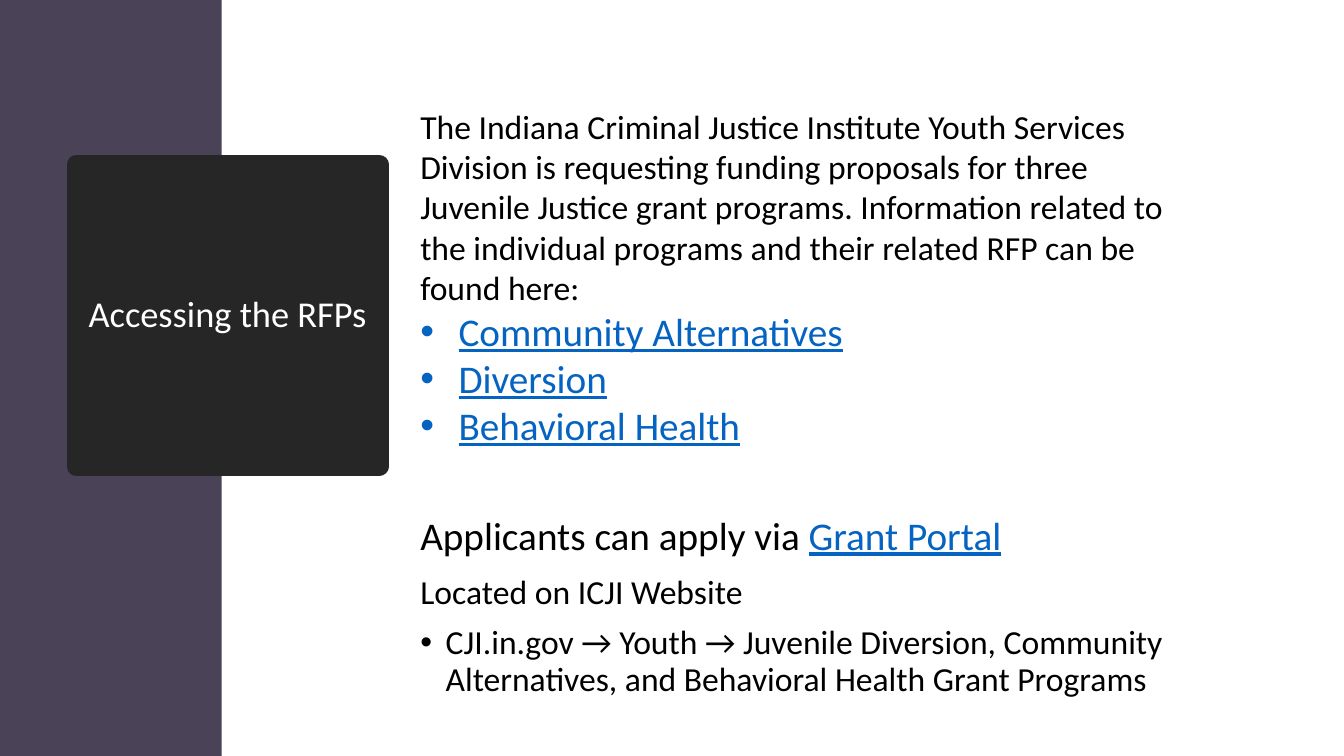
from dataclasses import dataclass

import pptx
import pptx.dml.color
import pptx.enum.shapes
import pptx.enum.text
import pptx.oxml.ns
import pptx.util
from lxml import etree


@dataclass(frozen=True)
class Theme:
    font: str = "Calibri"
    band: str = "4A4358"
    card: str = "262626"
    light: str = "FFFFFF"
    dark: str = "000000"
    link: str = "0563C1"
    title_size: int = 26
    body_size: int = 24
    large_size: int = 28
    card_border: float = 13.75


@dataclass(frozen=True)
class Area:
    """A rectangle in percent of the slide's width and height."""
    left: float
    top: float
    width: float
    height: float


@dataclass(frozen=True)
class Run:
    text: str
    linked: bool = False


@dataclass(frozen=True)
class Line:
    runs: tuple[Run, ...]
    size: int
    indent: float = 0


THEME = Theme()
SLIDE_WIDTH = pptx.util.Inches(13.33)
SLIDE_HEIGHT = pptx.util.Inches(7.5)
TEXT_LEFT, TEXT_WIDTH = 30.53, 58.96

BAND = Area(0, 0, 16.5, 100)
CARD = Area(5.7, 21.73, 22.5, 40)
PROGRAMS = Area(TEXT_LEFT, 13.33, TEXT_WIDTH, 52.27)
APPLY = Area(TEXT_LEFT, 66.93, 61.59, 7.6)
LOCATION = Area(TEXT_LEFT, 75.47, TEXT_WIDTH, 18.8)

PROGRAM_LINES = [
    Line((Run("The Indiana Criminal Justice Institute Youth Services Division is "
              "requesting funding proposals for three Juvenile Justice grant programs. "
              "Information related to the individual programs and their related RFP "
              "can be found here:"),), THEME.body_size),
    *(Line((Run(name, linked=True),), THEME.large_size, indent=0.38)
      for name in ("Community Alternatives", "Diversion", "Behavioral Health")),
]
APPLY_LINES = [
    Line((Run("Applicants can apply via "), Run("Grant Portal", linked=True)),
         THEME.large_size),
]
LOCATION_LINES = [
    Line((Run("Located on ICJI Website"),), THEME.body_size),
    Line((Run("CJI.in.gov → Youth → Juvenile Diversion, Community Alternatives, "
              "and Behavioral Health Grant Programs"),), THEME.body_size, indent=0.25),
]


def rgb(color: str) -> pptx.dml.color.RGBColor:
    return pptx.dml.color.RGBColor.from_string(color)


def box(area: Area) -> tuple[int, int, int, int]:
    return (round(SLIDE_WIDTH * area.left / 100), round(SLIDE_HEIGHT * area.top / 100),
            round(SLIDE_WIDTH * area.width / 100), round(SLIDE_HEIGHT * area.height / 100))


def move(shape, area: Area) -> None:
    shape.left, shape.top, shape.width, shape.height = box(area)


def set_bullet(paragraph, indent: float) -> None:
    """Hang a bullet by the indent in inches, or clear it when the indent is zero."""
    properties = paragraph._p.get_or_add_pPr()
    properties.set("marL", str(pptx.util.Inches(indent)))
    properties.set("indent", str(-pptx.util.Inches(indent)))
    if not indent:
        etree.SubElement(properties, pptx.oxml.ns.qn("a:buNone"))
        return
    etree.SubElement(properties, pptx.oxml.ns.qn("a:buFont"), typeface="Arial")
    etree.SubElement(properties, pptx.oxml.ns.qn("a:buChar"), char="•")


def add_run(paragraph, text: str, *, size: int, color: str, underline: bool = False) -> None:
    run = paragraph.add_run()
    run.text = text
    run.font.name = THEME.font
    run.font.size = pptx.util.Pt(size)
    run.font.color.rgb = rgb(color)
    if underline:
        run.font.underline = True


def write_lines(shape, lines: list[Line], *, spacing: float = 1.0, gap: float = 0) -> None:
    frame = shape.text_frame
    frame.word_wrap = True
    frame.auto_size = pptx.enum.text.MSO_AUTO_SIZE.NONE
    frame.vertical_anchor = pptx.enum.text.MSO_ANCHOR.TOP
    for index, line in enumerate(lines):
        paragraph = frame.add_paragraph() if index else frame.paragraphs[0]
        set_bullet(paragraph, line.indent)
        paragraph.line_spacing = spacing
        paragraph.space_before = pptx.util.Pt(gap if index else 0)
        for run in line.runs:
            add_run(paragraph, run.text, size=line.size, underline=run.linked,
                    color=THEME.link if run.linked else THEME.dark)


def write_title(title, text: str) -> None:
    move(title, CARD)
    title.fill.solid()
    title.fill.fore_color.rgb = rgb(THEME.card)
    title.line.color.rgb = rgb(THEME.card)
    title.line.width = pptx.util.Pt(THEME.card_border)
    frame = title.text_frame
    frame.word_wrap = True
    frame.auto_size = pptx.enum.text.MSO_AUTO_SIZE.NONE
    frame.vertical_anchor = pptx.enum.text.MSO_ANCHOR.MIDDLE
    frame.margin_left = frame.margin_right = pptx.util.Inches(0.05)
    paragraph = frame.paragraphs[0]
    paragraph.alignment = pptx.enum.text.PP_ALIGN.CENTER
    paragraph.line_spacing = 0.9
    add_run(paragraph, text, size=THEME.title_size, color=THEME.light)


def main() -> None:
    presentation = pptx.Presentation()
    presentation.slide_width, presentation.slide_height = SLIDE_WIDTH, SLIDE_HEIGHT
    slide = presentation.slides.add_slide(presentation.slide_layouts[1])
    title, body = slide.shapes.title, slide.placeholders[1]

    # Side band, behind the title card
    band = slide.shapes.add_shape(pptx.enum.shapes.MSO_SHAPE.RECTANGLE, *box(BAND))
    band.shadow.inherit = False
    band.fill.solid()
    band.fill.fore_color.rgb = rgb(THEME.band)
    band.line.fill.background()
    title.element.addprevious(band.element)

    # Title card
    write_title(title, "Accessing the RFPs")

    # Where the programs are found on the website
    move(body, LOCATION)
    write_lines(body, LOCATION_LINES, spacing=0.9, gap=10)

    # Program list and application line
    for area, lines in ((APPLY, APPLY_LINES), (PROGRAMS, PROGRAM_LINES)):
        write_lines(slide.shapes.add_textbox(*box(area)), lines)

    presentation.save("out.pptx")


if __name__ == "__main__":
    main()
